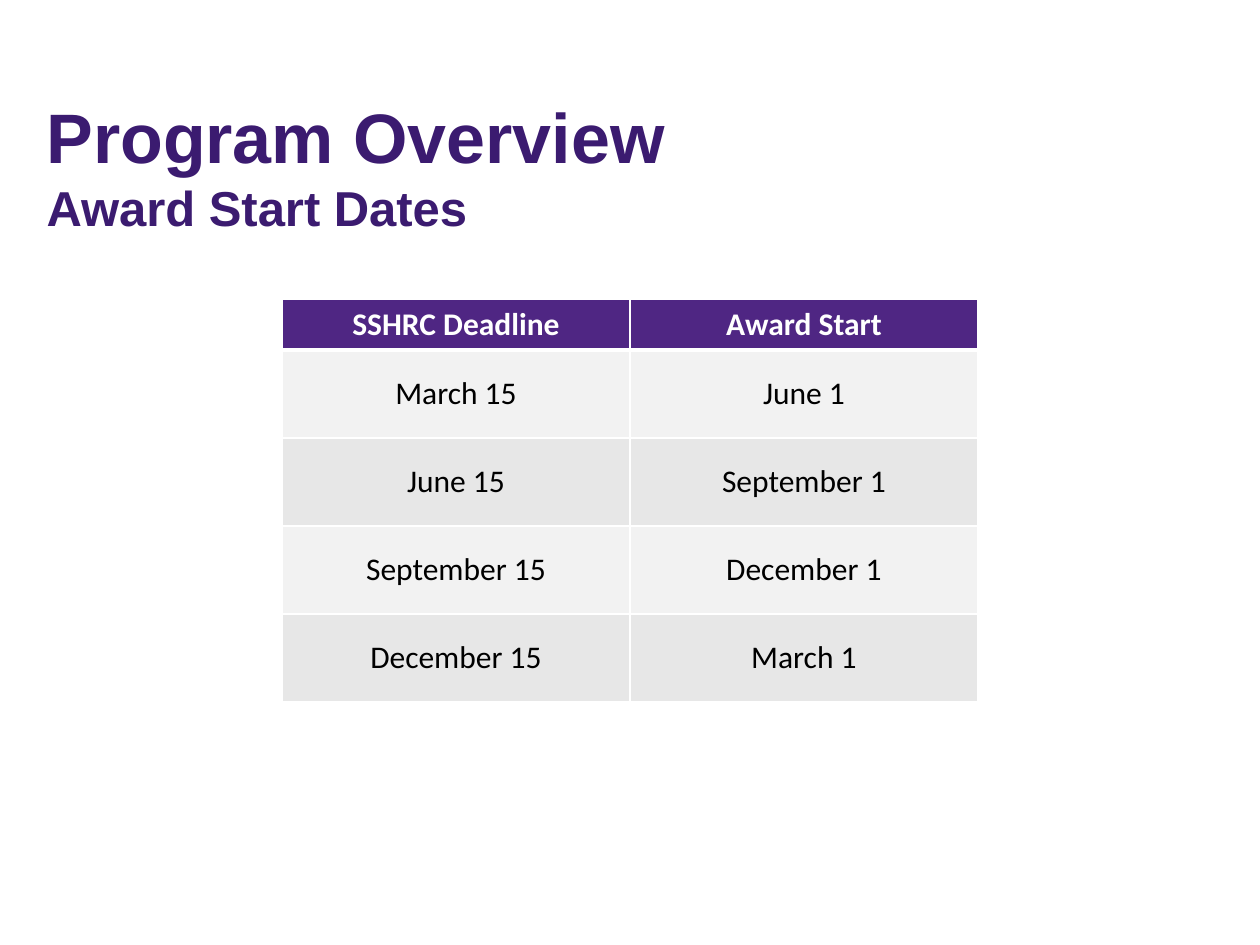
from dataclasses import dataclass

from lxml.etree import SubElement
from pptx import Presentation
from pptx.dml.color import RGBColor
from pptx.enum.text import MSO_ANCHOR, MSO_AUTO_SIZE, PP_ALIGN
from pptx.oxml.ns import qn
from pptx.util import Pt

PX = 914400 // 126  # EMU in one px


@dataclass(frozen=True)
class Theme:
    title_font: str = "Arial"
    table_font: str = "Calibri"
    title_color: str = "3B1B70"
    header_fill: str = "4F2683"
    band_fills: tuple = ("F2F2F2", "E7E7E7")
    white: str = "FFFFFF"
    black: str = "000000"
    title_size: int = 40
    subtitle_size: int = 28
    table_size: int = 18
    thin_line: int = 1
    thick_line: int = 3


theme = Theme()


def style_text(span, font, size, color, bold):
    span.font.name = font
    span.font.size = Pt(size)
    span.font.color.rgb = RGBColor.from_string(color)
    span.font.bold = bold


def add_borders(cell, color, widths):
    properties = cell._tc.get_or_add_tcPr()
    for side, width in widths.items():
        line = SubElement(properties, qn(f"a:ln{side}"), w=str(Pt(width)))
        SubElement(SubElement(line, qn("a:solidFill")), qn("a:srgbClr"), val=color)


deck = Presentation()
deck.slide_width, deck.slide_height = 1260 * PX, 945 * PX
page = deck.slides.add_slide(deck.slide_layouts[5])

# Title with its subtitle on a second line
title = page.shapes.title
title.left, title.top, title.width, title.height = 34 * PX, 79 * PX, 1139 * PX, 237 * PX
frame = title.text_frame
frame.text = "Program Overview\vAward Start Dates"
frame.word_wrap = True
frame.auto_size = MSO_AUTO_SIZE.NONE
frame.vertical_anchor = MSO_ANCHOR.TOP
frame.margin_top = 14 * PX
para = frame.paragraphs[0]
para.alignment = PP_ALIGN.LEFT
para.space_after = Pt(12)
for span, size in zip(para.runs, (theme.title_size, theme.subtitle_size)):
    style_text(span, theme.title_font, size, theme.title_color, True)

# Table of deadlines and start dates
dates = [
    ("SSHRC Deadline", "Award Start"),
    ("March 15", "June 1"),
    ("June 15", "September 1"),
    ("September 15", "December 1"),
    ("December 15", "March 1"),
]
header_height, row_height, column_width = 51, 88, 348
table_height = header_height + row_height * (len(dates) - 1)
table = page.shapes.add_table(
    len(dates), 2, 282 * PX, 299 * PX, 2 * column_width * PX, table_height * PX
).table
for column in table.columns:
    column.width = column_width * PX

for row_index, row_dates in enumerate(dates):
    is_header = row_index == 0
    table.rows[row_index].height = (header_height if is_header else row_height) * PX
    fill = theme.header_fill if is_header else theme.band_fills[(row_index - 1) % 2]
    widths = dict.fromkeys("LRTB", theme.thin_line)
    if is_header:
        widths["B"] = theme.thick_line
    elif row_index == 1:
        widths["T"] = theme.thick_line
    for column_index, date in enumerate(row_dates):
        cell = table.cell(row_index, column_index)
        cell.text_frame.text = date
        cell.vertical_anchor = MSO_ANCHOR.TOP if is_header else MSO_ANCHOR.MIDDLE
        add_borders(cell, theme.white, widths)
        cell.fill.solid()
        cell.fill.fore_color.rgb = RGBColor.from_string(fill)
        para = cell.text_frame.paragraphs[0]
        para.alignment = PP_ALIGN.CENTER
        color = theme.white if is_header else theme.black
        style_text(para.runs[0], theme.table_font, theme.table_size, color, is_header)

deck.save("out.pptx")
